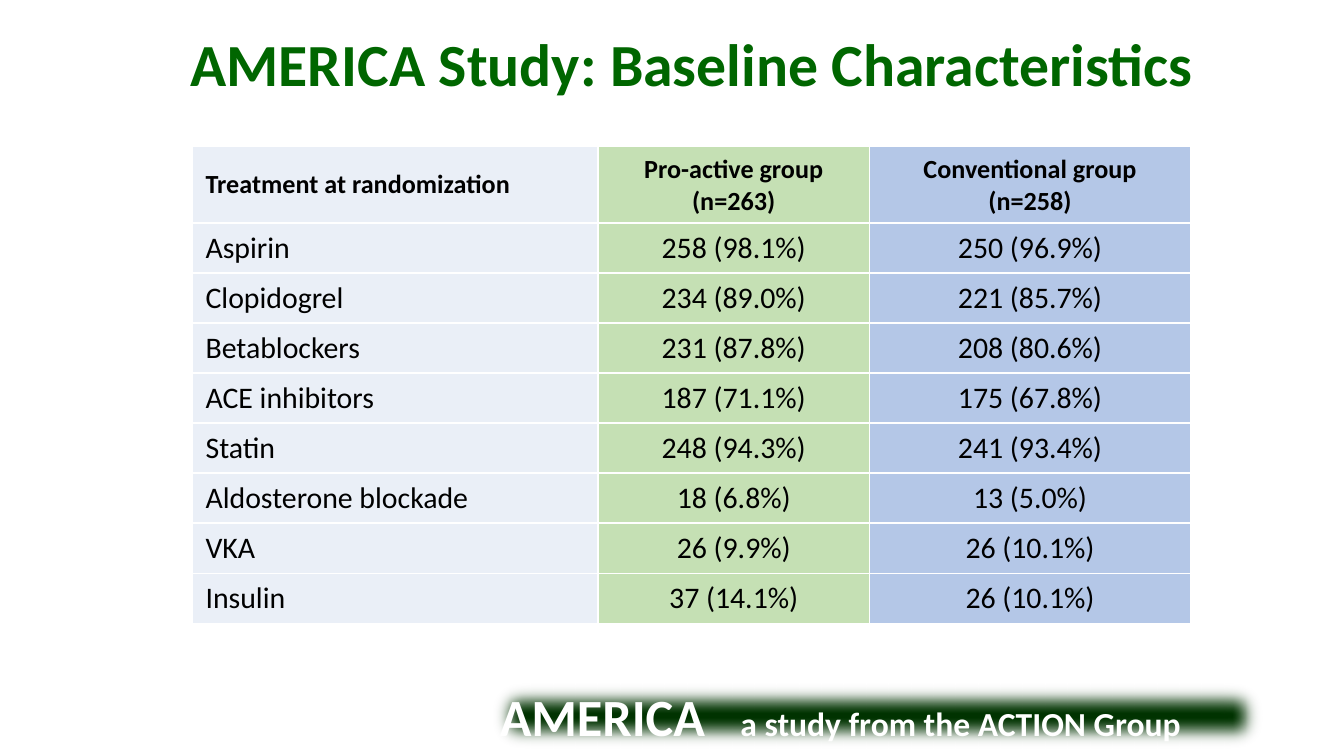
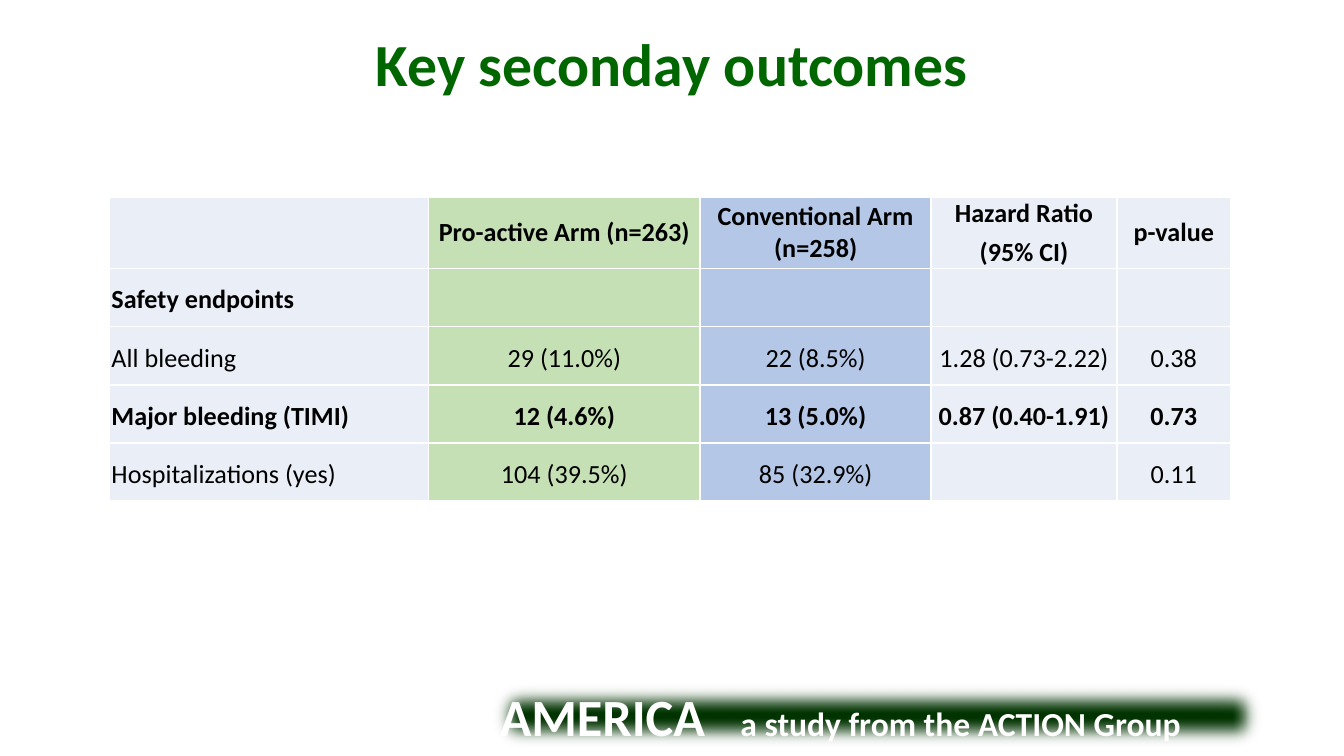
from lxml import etree
from pptx import Presentation
from pptx import util as u
from pptx.dml.color import RGBColor
from pptx.enum import shapes, text
from pptx.oxml import ns

# Shared look
SLIDE_WIDTH = u.Inches(10)
SLIDE_HEIGHT = SLIDE_WIDTH * 9 // 16
FONT = "Calibri"
WHITE = RGBColor(0xFF, 0xFF, 0xFF)
BLACK = RGBColor(0, 0, 0)
TITLE_GREEN = RGBColor(0, 0x66, 0)
BAND_GREEN = RGBColor(0, 0x33, 0)
LABEL_FILL = RGBColor(0xEA, 0xEF, 0xF7)
ACTIVE_FILL = RGBColor(0xC5, 0xE0, 0xB4)
CONVENTIONAL_FILL = RGBColor(0xB4, 0xC7, 0xE7)
COLUMN_FILLS = [LABEL_FILL, ACTIVE_FILL, CONVENTIONAL_FILL, LABEL_FILL, LABEL_FILL]

# Table contents
TREATMENTS = [
    ["Treatment at randomization", "Pro-active group (n=263)", "Conventional group (n=258)"],
    ["Aspirin", "258 (98.1%)", "250 (96.9%)"],
    ["Clopidogrel", "234 (89.0%)", "221 (85.7%)"],
    ["Betablockers", "231 (87.8%)", "208 (80.6%)"],
    ["ACE inhibitors", "187 (71.1%)", "175 (67.8%)"],
    ["Statin", "248 (94.3%)", "241 (93.4%)"],
    ["Aldosterone blockade", "18 (6.8%)", "13 (5.0%)"],
    ["VKA", "26 (9.9%)", "26 (10.1%)"],
    ["Insulin", "37 (14.1%)", "26 (10.1%)"],
]
OUTCOMES = [
    ["", "Pro-active Arm (n=263)", "Conventional Arm (n=258)", "Hazard Ratio\n(95% CI)", "p-value"],
    ["Safety endpoints", "", "", "", ""],
    ["All bleeding", "29 (11.0%)", "22 (8.5%)", "1.28 (0.73-2.22)", "0.38"],
    ["Major bleeding (TIMI)", "12 (4.6%)", "13 (5.0%)", "0.87 (0.40-1.91)", "0.73"],
    ["Hospitalizations (yes)", "104 (39.5%)", "85 (32.9%)", "", "0.11"],
]


def across(percent):
    return int(SLIDE_WIDTH * percent / 100)


def down(percent):
    return int(SLIDE_HEIGHT * percent / 100)


def style_font(font, size, color, bold):
    font.name = FONT
    font.size = u.Pt(size)
    font.color.rgb = color
    font.bold = bold


def add_title(slide, title, left):
    shape = slide.shapes.add_textbox(across(left), 0, across(90), down(16.7))
    frame = shape.text_frame
    frame.word_wrap = True
    frame.vertical_anchor = text.MSO_ANCHOR.MIDDLE
    frame.text = title
    paragraph = frame.paragraphs[0]
    paragraph.alignment = text.PP_ALIGN.CENTER
    style_font(paragraph.runs[0].font, 32, TITLE_GREEN, True)


def add_footer(slide):
    """Soft-edged band with the study name and its group."""
    band = slide.shapes.add_shape(shapes.MSO_SHAPE.RECTANGLE, across(36.2), down(89.6),
                                  across(58.2), down(10.1))
    band.shadow.inherit = False
    band.fill.solid()
    band.fill.fore_color.rgb = BAND_GREEN
    band.line.fill.background()
    effects = band._element.spPr.find(ns.qn("a:effectLst"))
    etree.SubElement(effects, ns.qn("a:softEdge"), rad=str(u.Pt(10)))

    frame = band.text_frame
    frame.word_wrap = True
    frame.vertical_anchor = text.MSO_ANCHOR.TOP
    frame.text = "AMERICA"
    paragraph = frame.paragraphs[0]
    paragraph.alignment = text.PP_ALIGN.LEFT
    tabs = etree.SubElement(paragraph._p.get_or_add_pPr(), ns.qn("a:tabLst"))
    etree.SubElement(tabs, ns.qn("a:tab"), pos=str(across(17.9)), algn="l")
    style_font(paragraph.runs[0].font, 28, WHITE, True)
    group = paragraph.add_run()
    group.text = "\ta study from the ACTION Group"
    style_font(group.font, 18, WHITE, True)


def outline_cell(cell):
    """White one-point line on all four sides."""
    properties = cell._tc.get_or_add_tcPr()
    for position, side in enumerate(("lnL", "lnR", "lnT", "lnB")):
        line = etree.Element(ns.qn("a:" + side), w=str(u.Pt(1)))
        fill = etree.SubElement(line, ns.qn("a:solidFill"))
        etree.SubElement(fill, ns.qn("a:srgbClr"), val=str(WHITE))
        properties.insert(position, line)


def fill_cell(cell, words, fill, size, bold, centred, gap, line_spacing):
    cell.fill.solid()
    cell.fill.fore_color.rgb = fill
    outline_cell(cell)
    cell.vertical_anchor = text.MSO_ANCHOR.MIDDLE
    cell.text_frame.text = words
    for index, paragraph in enumerate(cell.text_frame.paragraphs):
        paragraph.alignment = text.PP_ALIGN.CENTER if centred else text.PP_ALIGN.LEFT
        paragraph.space_after = u.Pt(gap)
        if index:
            paragraph.space_before = u.Pt(gap)
        if line_spacing:
            paragraph.line_spacing = line_spacing
        style_font(paragraph.font, size, BLACK, bold)
        for run in paragraph.runs:
            style_font(run.font, size, BLACK, bold)


def add_table(slide, rows, left, top, widths, height, header_height, body_size,
              gap, bold_rows=(0,), tight=False):
    """Header row of its own height; the other rows share the rest equally."""
    body_height = (height - header_height) / (len(rows) - 1)
    table = slide.shapes.add_table(len(rows), len(widths), across(left), down(top),
                                   across(sum(widths)), u.Inches(height)).table
    table.first_row = table.horz_banding = False
    for column, width in zip(table.columns, widths):
        column.width = across(width)
    for row_index, row in enumerate(rows):
        table.rows[row_index].height = u.Inches(body_height if row_index else header_height)
        for column_index, words in enumerate(row):
            cell = table.cell(row_index, column_index)
            if tight:
                cell.margin_top = cell.margin_bottom = 0
                cell.margin_left = cell.margin_right = u.Inches(0.02 if column_index < 3 else 0)
            fill_cell(cell, words, COLUMN_FILLS[column_index],
                      body_size if row_index else 14, row_index in bold_rows,
                      column_index > 0, gap, 1.15 if tight and row_index else None)


def add_slide(presentation, title, title_left):
    slide = presentation.slides.add_slide(presentation.slide_layouts[6])
    slide.background.fill.solid()
    slide.background.fill.fore_color.rgb = WHITE
    add_footer(slide)
    add_title(slide, title, title_left)
    return slide


def main():
    presentation = Presentation()
    presentation.slide_width, presentation.slide_height = SLIDE_WIDTH, SLIDE_HEIGHT

    # Baseline treatments
    slide = add_slide(presentation, "AMERICA Study: Baseline Characteristics", 6.5)
    add_table(slide, TREATMENTS, 14.3, 19.4, [30.2, 20.2, 23.9], 3.54, 0.56, 16, gap=6)

    # Safety outcomes
    slide = add_slide(presentation, "Key seconday outcomes", 5)
    add_table(slide, OUTCOMES, 8.1, 26.1, [23.8, 20.2, 17.2, 13.8, 8.5], 2.26, 0.53, 14,
              gap=2, bold_rows=(0, 1, 3), tight=True)

    presentation.save("out.pptx")


if __name__ == "__main__":
    main()
